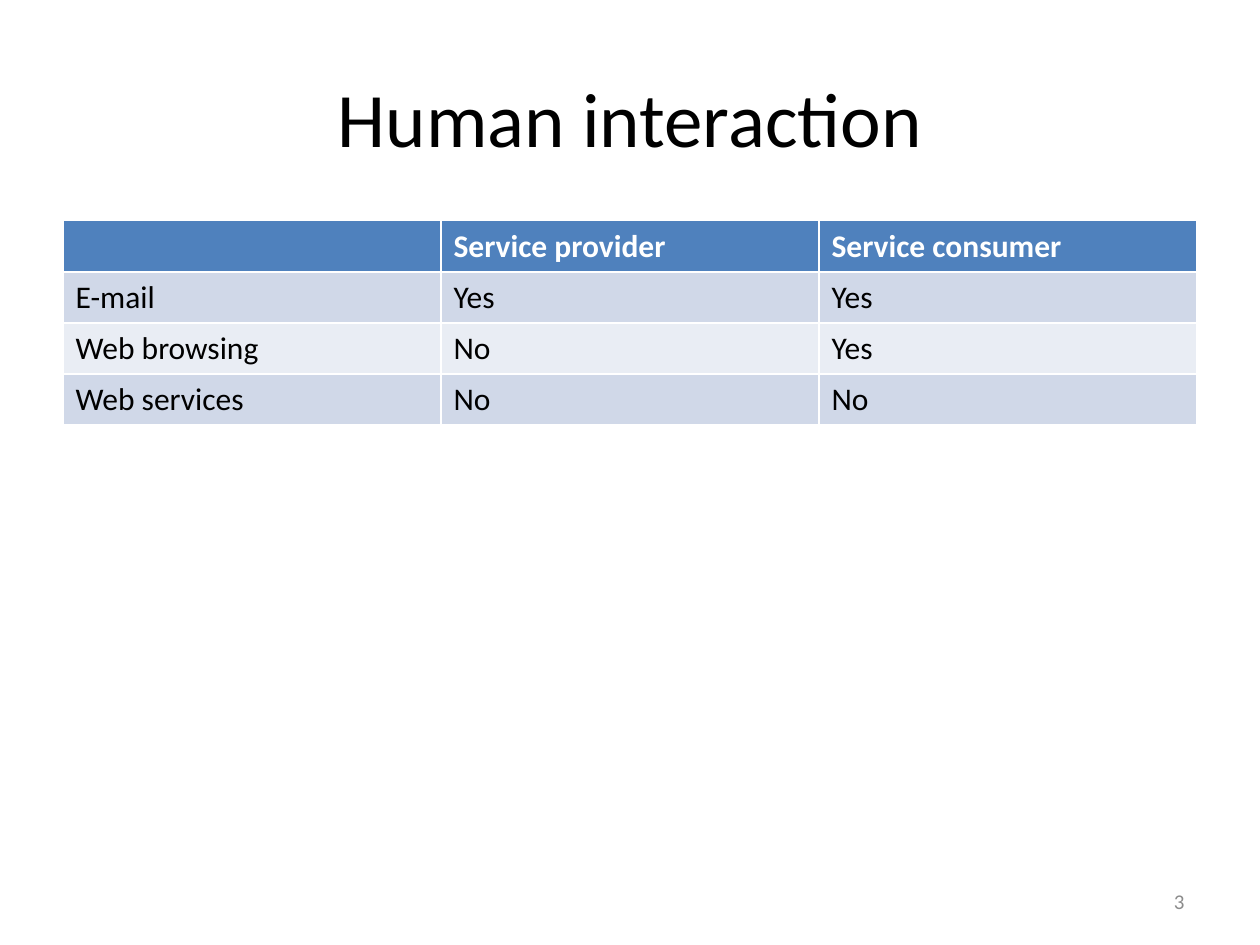
from collections import namedtuple
from dataclasses import dataclass

from pptx import Presentation
from pptx.dml.color import RGBColor as Color
from pptx.enum.text import MSO_ANCHOR as Anchor, PP_ALIGN as Align
from pptx.util import Cm, Pt

Box = namedtuple("Box", "left top width height")


@dataclass(frozen=True)
class Theme:
    font: str = "Calibri"
    title_size: int = 44
    table_size: int = 18
    number_size: int = 12
    text: str = "000000"
    header_text: str = "FFFFFF"
    header_fill: str = "4F81BD"
    band_fills: tuple = ("D0D8E8", "E9EDF4")
    number: str = "8C8C8C"


THEME = Theme()

INTERACTION = [
    ["", "Service provider", "Service consumer"],
    ["E-mail", "Yes", "Yes"],
    ["Web browsing", "No", "Yes"],
    ["Web services", "No", "No"],
]


def place(shape, box):
    shape.left, shape.top, shape.width, shape.height = (Cm(length) for length in box)


def add_text(paragraph, text, size, color, bold=False):
    run = paragraph.add_run()
    run.text = text
    run.font.name = THEME.font
    run.font.size = Pt(size)
    run.font.bold = bold
    run.font.color.rgb = Color.from_string(color)


def add_title(slide, box, text):
    title = slide.shapes.title
    place(title, box)
    title.text_frame.vertical_anchor = Anchor.MIDDLE
    paragraph = title.text_frame.paragraphs[0]
    paragraph.alignment = Align.CENTER
    add_text(paragraph, text, THEME.title_size, THEME.text)


def add_interaction_table(slide, box, rows):
    # The default table style supplies the white rules between the cells
    lengths = (Cm(length) for length in box)
    table = slide.shapes.add_table(len(rows), len(rows[0]), *lengths).table
    for row_index, row in enumerate(rows):
        header = row_index == 0
        fill = THEME.header_fill if header else THEME.band_fills[(row_index - 1) % 2]
        color = THEME.header_text if header else THEME.text
        for column_index, text in enumerate(row):
            cell = table.cell(row_index, column_index)
            cell.fill.solid()
            cell.fill.fore_color.rgb = Color.from_string(fill)
            if text:
                paragraph = cell.text_frame.paragraphs[0]
                add_text(paragraph, text, THEME.table_size, color, bold=header)


def add_page_number(slide, box, number):
    text_box = slide.shapes.add_textbox(*(Cm(length) for length in box))
    frame = text_box.text_frame
    frame.word_wrap = True
    frame.vertical_anchor = Anchor.MIDDLE
    paragraph = frame.paragraphs[0]
    paragraph.alignment = Align.RIGHT
    add_text(paragraph, str(number), THEME.number_size, THEME.number)


def main():
    presentation = Presentation()
    presentation.slide_width, presentation.slide_height = Cm(25.4), Cm(19.05)
    title_only = presentation.slide_layouts[5]
    slide = presentation.slides.add_slide(title_only)

    add_title(slide, Box(1.27, 0.76, 22.86, 3.18), "Human interaction")
    add_interaction_table(slide, Box(1.27, 4.45, 22.86, 4.12), INTERACTION)
    add_page_number(slide, Box(18.2, 17.66, 5.93, 1.01), 3)

    presentation.save("out.pptx")


if __name__ == "__main__":
    main()
